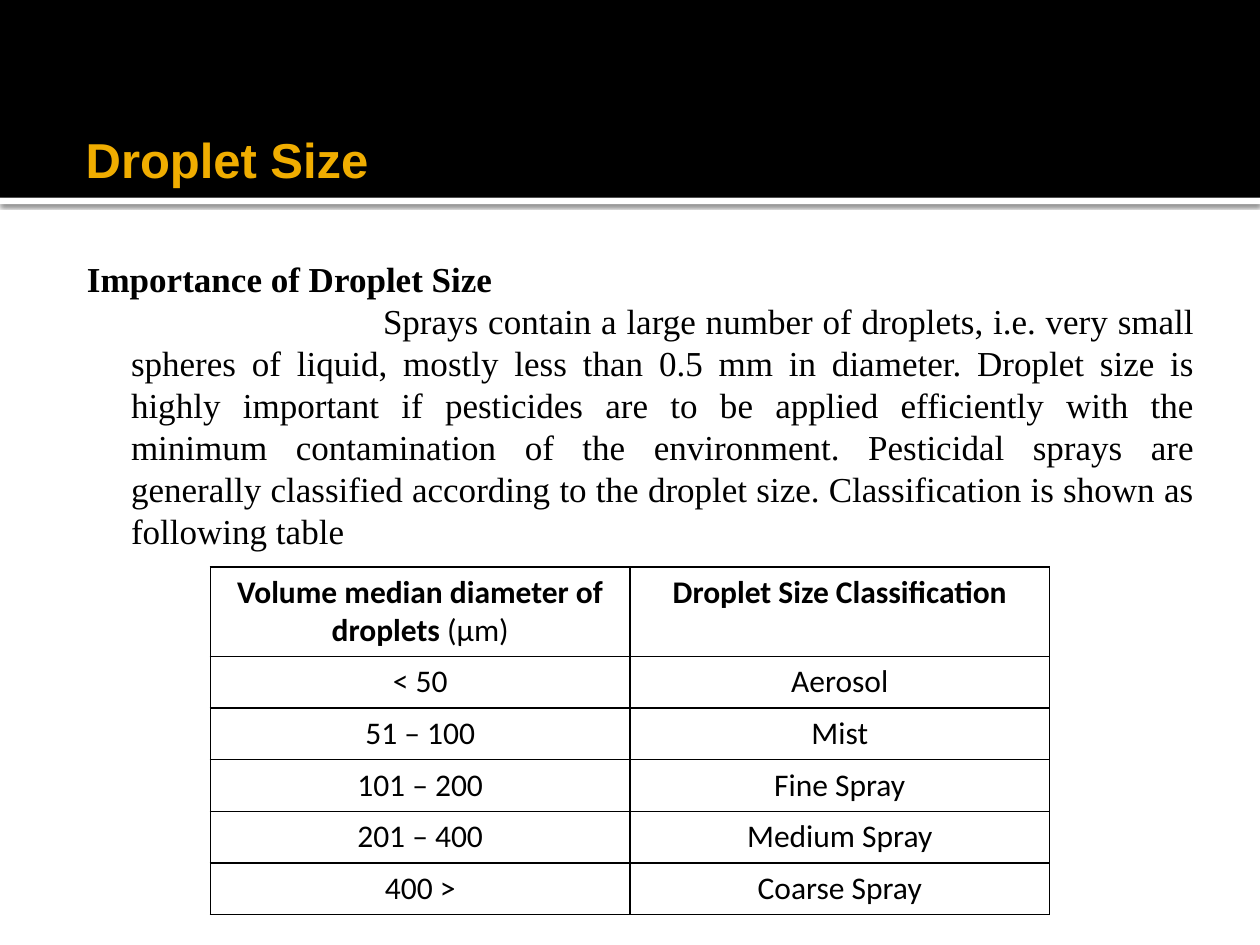
from lxml import etree
from pptx import Presentation
from pptx.dml.color import RGBColor
from pptx.enum.shapes import MSO_SHAPE
from pptx.enum.text import MSO_ANCHOR, PP_ALIGN
from pptx.oxml import parse_xml
from pptx.oxml.ns import nsdecls, qn
from pptx.util import Inches, Pt

RECTANGLE = MSO_SHAPE.RECTANGLE
LEFT, CENTER, JUSTIFY = PP_ALIGN.LEFT, PP_ALIGN.CENTER, PP_ALIGN.JUSTIFY
TOP, MIDDLE = MSO_ANCHOR.TOP, MSO_ANCHOR.MIDDLE

BLACK, WHITE, GOLD = "000000", "FFFFFF", "F0AD00"
TITLE = "Droplet Size"
HEADING = "Importance of Droplet Size"
BODY = (
    "\t\t\tSprays contain a large number of droplets, i.e. very small spheres of liquid, "
    "mostly less than 0.5 mm in diameter. Droplet size is highly important if pesticides "
    "are to be applied efficiently with the minimum contamination of the environment. "
    "Pesticidal sprays are generally classified according to the droplet size. "
    "Classification is shown as following table "
)
# Each cell is a list of (text, bold) runs.
HEADER = [
    [("Volume median diameter of droplets", True), (" (µm)", False)],
    [("Droplet Size Classification", True)],
]
CLASSES = [
    ("< 50", "Aerosol"),
    ("51 – 100", "Mist"),
    ("101 – 200", "Fine Spray"),
    ("201 – 400", "Medium Spray"),
    ("400 >", "Coarse Spray"),
]
HEADER_HEIGHT, ROW_HEIGHT, COLUMN_WIDTH = 0.71, 0.41, 3.33


def color(value):
    return RGBColor.from_string(value)


def write(paragraph, runs, size=18, font="Calibri", fill=BLACK, align=CENTER):
    """Add (text, bold) runs to a paragraph in one format."""
    paragraph.alignment = align
    for text, bold in runs:
        run = paragraph.add_run()
        run.text = text
        run.font.size, run.font.name, run.font.bold = Pt(size), font, bold
        run.font.color.rgb = color(fill)


def set_frame(frame, insets, anchor):
    frame.word_wrap = True
    frame.vertical_anchor = anchor
    (frame.margin_left, frame.margin_top,
     frame.margin_right, frame.margin_bottom) = map(Inches, insets)


def add_band(slide, top, height, fill):
    band = slide.shapes.add_shape(RECTANGLE, 0, Inches(top), Inches(10), Inches(height))
    band.shadow.inherit = False
    band.fill.solid()
    band.fill.fore_color.rgb = color(fill)
    band.line.fill.background()
    return band


def add_drop_shadow(shape):
    effects = shape._element.spPr.find(qn("a:effectLst"))
    effects.append(parse_xml(
        f'<a:outerShdw {nsdecls("a")} blurRad="{Pt(2.5)}" dist="{Pt(0.8)}" dir="5400000">'
        f'<a:srgbClr val="{BLACK}"><a:alpha val="60000"/></a:srgbClr></a:outerShdw>'))


def add_borders(cell):
    properties = cell._tc.get_or_add_tcPr()
    for position, side in enumerate(("a:lnL", "a:lnR", "a:lnT", "a:lnB")):
        line = etree.Element(qn(side), w=str(Pt(1)))
        fill = etree.SubElement(line, qn("a:solidFill"))
        etree.SubElement(fill, qn("a:srgbClr"), val=BLACK)
        properties.insert(position, line)


def add_title(slide):
    title = slide.shapes.title
    title.left, title.top, title.width, title.height = map(Inches, (0.58, 0.87, 3.75, 0.79))
    set_frame(title.text_frame, (0.1, 0.05, 0.05, 0.05), MIDDLE)
    write(title.text_frame.paragraphs[0], [(TITLE, True)],
          size=28, font="Arial", fill=GOLD, align=LEFT)
    slide.shapes._spTree.append(title._element)  # in front of the bands


def add_body(slide):
    box = slide.shapes.add_textbox(*map(Inches, (0.5, 1.94, 9.08, 5.31)))
    frame = box.text_frame
    set_frame(frame, (0.06, 0.1, 0.1, 0.05), TOP)
    paragraphs = [frame.paragraphs[0], frame.add_paragraph()]
    for paragraph, run in zip(paragraphs, [(HEADING, True), (BODY, False)]):
        write(paragraph, [run], size=20, font="Times New Roman", align=JUSTIFY)
        paragraph.line_spacing = Pt(24)
        properties = paragraph._p.get_or_add_pPr()
        properties.set("marL", str(Inches(0.48)))
        properties.set("indent", str(Inches(-0.35)))
        # Tab stops lie one inch apart, counted from the left margin.
        stops = etree.Element(qn("a:tabLst"))
        for distance in (1, 2):
            etree.SubElement(stops, qn("a:tab"), pos=str(Inches(0.48 + distance)), algn="l")
        properties.append(stops)
        properties.set("defTabSz", str(Inches(1)))


def add_class_table(slide):
    rows = [HEADER] + [[[(text, False)] for text in row] for row in CLASSES]
    heights = [HEADER_HEIGHT] + [ROW_HEIGHT] * len(CLASSES)
    table = slide.shapes.add_table(
        len(rows), len(HEADER), Inches(1.67), Inches(4.5),
        Inches(COLUMN_WIDTH * len(HEADER)), Inches(sum(heights))).table
    table.first_row = table.horz_banding = False
    for column in table.columns:
        column.width = Inches(COLUMN_WIDTH)
    for row_index, (row, height) in enumerate(zip(rows, heights)):
        table.rows[row_index].height = Inches(height)
        for column_index, runs in enumerate(row):
            cell = table.cell(row_index, column_index)
            cell.fill.background()
            add_borders(cell)
            write(cell.text_frame.paragraphs[0], runs)


def main():
    presentation = Presentation()
    presentation.slide_width, presentation.slide_height = Inches(10), Inches(7.5)
    slide = presentation.slides.add_slide(presentation.slide_layouts[5])
    add_drop_shadow(add_band(slide, 1.57, 0.05, WHITE))
    add_band(slide, 0, 1.57, BLACK)
    add_title(slide)
    add_body(slide)
    add_class_table(slide)
    presentation.save("out.pptx")


if __name__ == "__main__":
    main()
